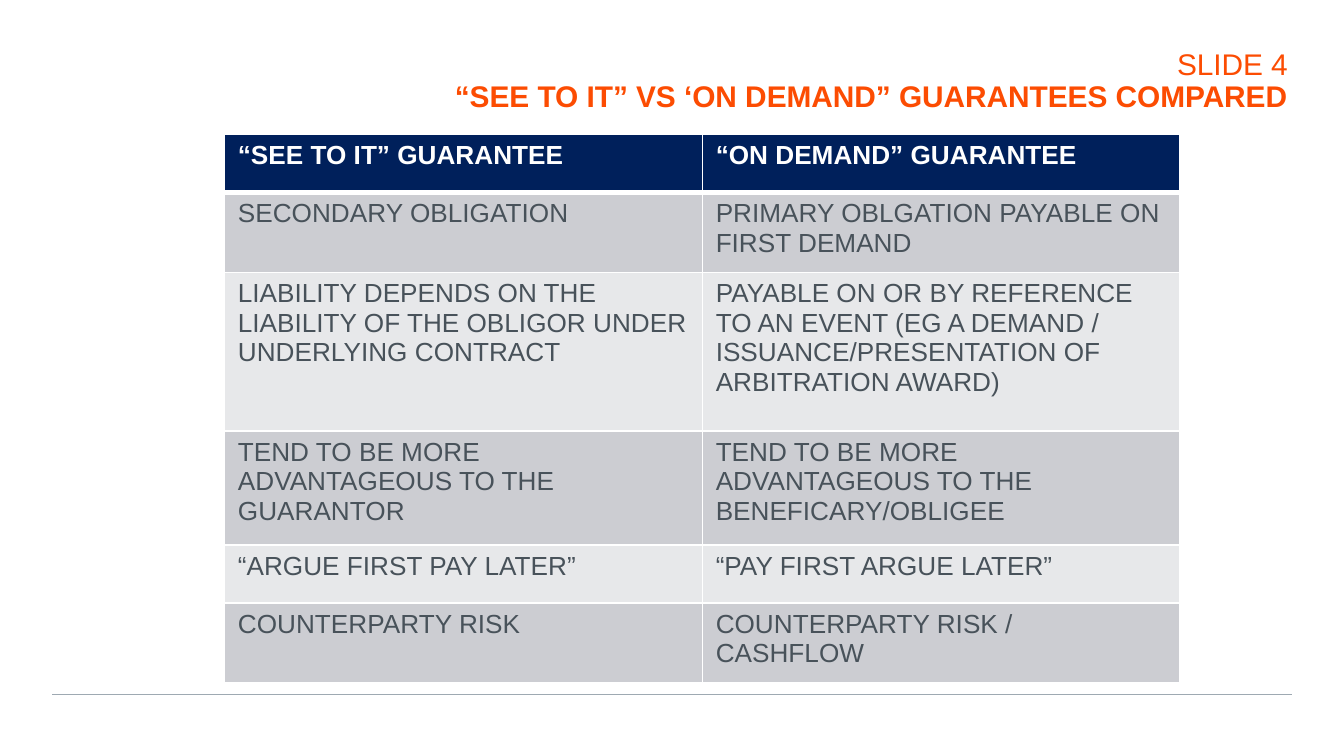
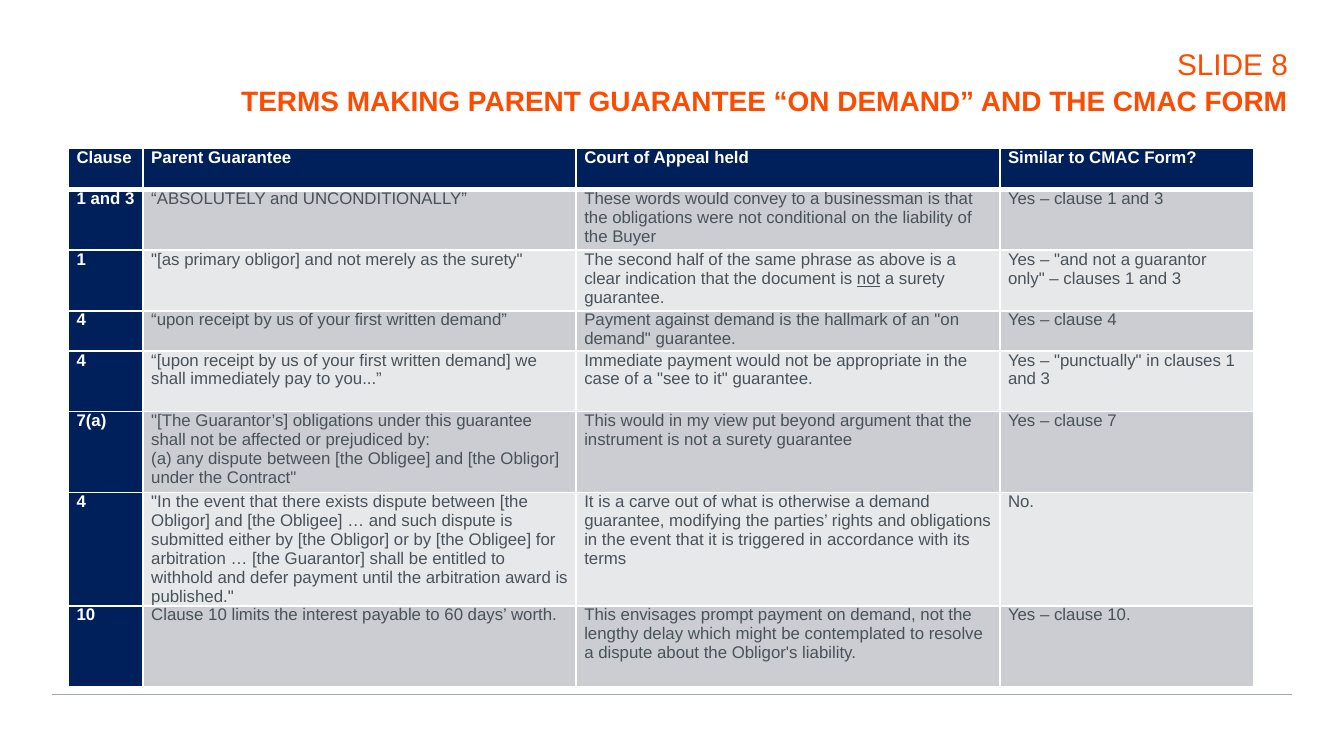
from dataclasses import dataclass

from lxml import etree
from pptx import Presentation
from pptx.dml.color import RGBColor
from pptx.enum.shapes import MSO_CONNECTOR
from pptx.enum.text import MSO_ANCHOR, MSO_AUTO_SIZE, PP_ALIGN
from pptx.oxml.ns import qn
from pptx.util import Pt

STRAIGHT = MSO_CONNECTOR.STRAIGHT
TOP = MSO_ANCHOR.TOP
NO_FIT = MSO_AUTO_SIZE.NONE
RIGHT = PP_ALIGN.RIGHT
TITLE_ONLY = 5


@dataclass(frozen=True)
class Theme:
    font: str = "Arial"
    accent: str = "FC4C02"
    navy: str = "00205B"
    body: str = "48525A"
    white: str = "FFFFFF"
    rule: str = "9EA9B2"
    bands: tuple = ("CCCDD2", "E7E8EA")
    title_size: float = 16
    subtitle_size: float = 15
    table_size: float = 14
    small_table_size: float = 9
    rule_width: float = 0.5
    border: float = 1
    header_border: float = 3
    right_edge: float = 690


class Deck:
    def __init__(self, theme):
        self.theme = theme
        self.prs = Presentation()
        self.prs.slide_width, self.prs.slide_height = Pt(720), Pt(405)
        self.slide = None

    def new_slide(self):
        layout = self.prs.slide_layouts[TITLE_ONLY]
        self.slide = self.prs.slides.add_slide(layout)
        self.footer_rule()

    def footer_rule(self):
        rule = self.slide.shapes.add_connector(
            STRAIGHT, Pt(28), Pt(372), Pt(692), Pt(372))
        rule.line.color.rgb = RGBColor.from_string(self.theme.rule)
        rule.line.width = Pt(self.theme.rule_width)
        etree.SubElement(rule._element.spPr, qn("a:effectLst"))

    def add_text(self, paragraph, text, size, color, bold=False):
        """Add text to a paragraph; words between underscores are underlined."""
        for index, piece in enumerate(text.split("_")):
            run = paragraph.add_run()
            run.text = piece
            style = {"name": self.theme.font, "size": Pt(size), "bold": bold}
            if index % 2:
                style["underline"] = True
            for name, value in style.items():
                setattr(run.font, name, value)
            run.font.color.rgb = RGBColor.from_string(color)

    def heading_frame(self, shape, top, width, height):
        """Place a heading against the right edge and return its paragraph."""
        place = {"left": self.theme.right_edge - width, "top": top,
                 "width": width, "height": height}
        for name, value in place.items():
            setattr(shape, name, Pt(value))
        frame_format = {"margin_left": 0, "margin_top": 0, "margin_right": 0,
                        "margin_bottom": 0, "word_wrap": True,
                        "auto_size": NO_FIT, "vertical_anchor": TOP}
        for name, value in frame_format.items():
            setattr(shape.text_frame, name, value)
        paragraph = shape.text_frame.paragraphs[0]
        paragraph.alignment = RIGHT
        return paragraph

    def title(self, number, topic=None, width=563):
        theme = self.theme
        heading = self.heading_frame(self.slide.shapes.title, 26.5, width, 18)
        heading.line_spacing = 0.9
        self.add_text(heading, number, theme.title_size, theme.accent)
        if topic:
            heading.add_line_break()
            self.add_text(heading, topic, theme.title_size, theme.accent, True)

    def subtitle(self, text):
        box = self.slide.shapes.add_textbox(0, 0, 0, 0)
        heading = self.heading_frame(box, 44.5, 572, 17)
        heading.space_after = Pt(6)
        self.add_text(heading, text, self.theme.subtitle_size, self.theme.accent, True)

    def borders(self, cell, widths):
        properties = cell._tc.get_or_add_tcPr()
        for side, width in zip("LRTB", widths):
            edge = etree.SubElement(properties, qn(f"a:ln{side}"), w=str(Pt(width)))
            fill = etree.SubElement(edge, qn("a:solidFill"))
            etree.SubElement(fill, qn("a:srgbClr"), val=self.theme.white)

    def table(self, left, top, columns, heights, rows, size, margins,
              first_col=False):
        theme = self.theme
        table = self.slide.shapes.add_table(
            len(rows), len(columns), Pt(left), Pt(top),
            Pt(sum(columns)), Pt(sum(heights))).table
        table.first_col = first_col
        for column, width in zip(table.columns, columns):
            column.width = Pt(width)
        for r, (texts, height) in enumerate(zip(rows, heights)):
            table.rows[r].height = Pt(height)
            above = theme.header_border if r == 1 else theme.border
            below = theme.header_border if r == 0 else theme.border
            for c, text in enumerate(texts):
                cell = table.cell(r, c)
                strong = r == 0 or (first_col and c == 0)
                self.borders(cell, (theme.border, theme.border, above, below))
                fill = theme.navy if strong else theme.bands[(r - 1) % 2]
                cell.fill.solid()
                cell.fill.fore_color.rgb = RGBColor.from_string(fill)
                for side, margin in zip(("left", "right", "top", "bottom"), margins):
                    setattr(cell, f"margin_{side}", Pt(margin))
                for index, line in enumerate(text.split("\n")):
                    frame = cell.text_frame
                    paragraph = frame.add_paragraph() if index else frame.paragraphs[0]
                    color = theme.white if strong else theme.body
                    self.add_text(paragraph, line, size, color, strong)


GUARANTEE_TYPES = [
    ("“SEE TO IT” GUARANTEE", "“ON DEMAND” GUARANTEE"),
    ("SECONDARY OBLIGATION", "PRIMARY OBLGATION PAYABLE ON FIRST DEMAND"),
    ("LIABILITY DEPENDS ON THE LIABILITY OF THE OBLIGOR UNDER UNDERLYING CONTRACT",
     "PAYABLE ON OR BY REFERENCE TO AN EVENT (EG A DEMAND / "
     "ISSUANCE/PRESENTATION OF ARBITRATION AWARD)"),
    ("TEND TO BE MORE ADVANTAGEOUS TO THE GUARANTOR",
     "TEND TO BE MORE ADVANTAGEOUS TO THE BENEFICARY/OBLIGEE"),
    ("“ARGUE FIRST PAY LATER”", "“PAY FIRST ARGUE LATER”"),
    ("COUNTERPARTY RISK", "COUNTERPARTY RISK / CASHFLOW"),
]

CLAUSES = [
    ("Clause", "Parent Guarantee", "Court of Appeal held", "Similar to CMAC Form?"),
    ("1 and 3", "“ABSOLUTELY and UNCONDITIONALLY”",
     "These words would convey to a businessman is that the obligations were "
     "not conditional on the liability of the Buyer",
     "Yes – clause 1 and 3"),
    ("1", '"[as primary obligor] and not merely as the surety"',
     "The second half of the same phrase as above is a clear indication that "
     "the document is _not_ a surety guarantee.",
     'Yes – "and not a guarantor only" – clauses 1 and 3'),
    ("4", "“upon receipt by us of your first written demand”",
     'Payment against demand is the hallmark of an "on demand" guarantee.',
     "Yes – clause 4"),
    ("4", "“[upon receipt by us of your first written demand] we shall "
     "immediately pay to you...”",
     'Immediate payment would not be appropriate in the case of a "see to it" '
     "guarantee.",
     'Yes – "punctually" in clauses 1 and 3'),
    ("7(a)", '"[The Guarantor’s] obligations under this guarantee shall not be '
     "affected or prejudiced by:\n(a) any dispute between [the Obligee] and "
     '[the Obligor] under the Contract"',
     "This would in my view put beyond argument that the instrument is not a "
     "surety guarantee",
     "Yes – clause 7"),
    ("4", '"In the event that there exists dispute between [the Obligor] and '
     "[the Obligee] … and such dispute is submitted either by [the Obligor] or "
     "by [the Obligee] for arbitration … [the Guarantor] shall be entitled to "
     'withhold and defer payment until the arbitration award is published."',
     "It is a carve out of what is otherwise a demand guarantee, modifying the "
     "parties’ rights and obligations in the event that it is triggered in "
     "accordance with its terms",
     "No."),
    ("10", "Clause 10 limits the interest payable to 60 days’ worth.",
     "This envisages prompt payment on demand, not the lengthy delay which "
     "might be contemplated to resolve a dispute about the Obligor's liability.",
     "Yes – clause 10."),
]


def main():
    theme = Theme()
    deck = Deck(theme)

    deck.new_slide()
    deck.title("SLIDE 4", "“SEE TO IT” VS ‘ON DEMAND” GUARANTEES COMPARED")
    deck.table(120.25, 72, (256, 256), (31, 43, 85, 61, 31, 43),
               GUARANTEE_TYPES, theme.table_size, margins=(7.2, 7.2, 3.6, 3.6))

    deck.new_slide()
    deck.title("SLIDE 8", width=276)
    deck.subtitle("TERMS MAKING PARENT GUARANTEE “ON DEMAND” AND THE CMAC FORM")
    deck.table(36.75, 79.5, (40, 232, 227, 136),
               (22, 32.5, 32.5, 21.5, 32.5, 43.5, 60.5, 43.5),
               CLAUSES, theme.small_table_size, margins=(4.3, 4.3, 0, 0),
               first_col=True)

    deck.prs.save("out.pptx")


if __name__ == "__main__":
    main()
